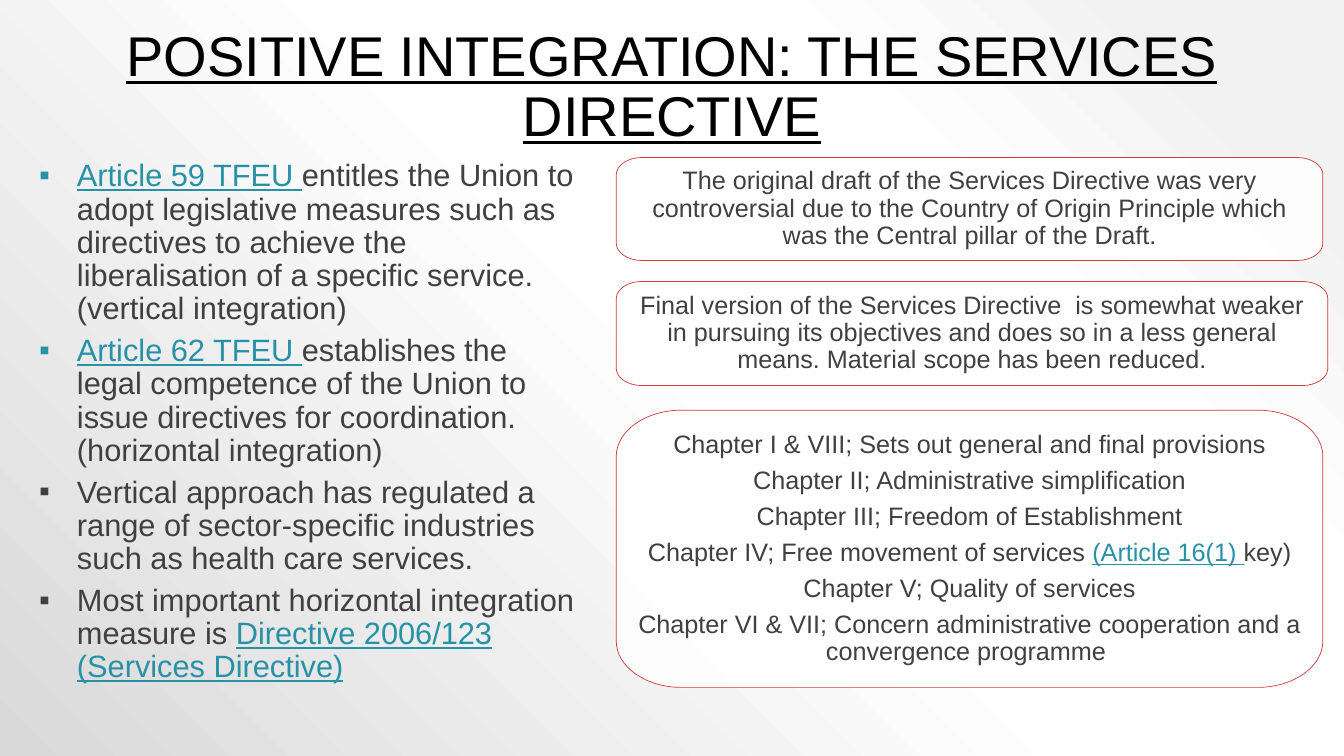
from lxml.etree import SubElement
from pptx import Presentation
from pptx.dml.color import RGBColor
from pptx.enum.text import MSO_ANCHOR, PP_ALIGN
from pptx.oxml import parse_xml
from pptx.oxml.ns import qn, nsdecls
from pptx.util import Pt

BLACK = RGBColor(0, 0, 0)
GREY = RGBColor(0x40, 0x40, 0x40)
TEAL = RGBColor(0x27, 0x91, 0xA6)
RED = RGBColor(0xD5, 0x39, 0x3D)
WHITE = RGBColor(0xFF, 0xFF, 0xFF)
FONT = "Arial"

TITLE = "POSITIVE INTEGRATION: THE SERVICES DIRECTIVE"
LINKS = {"Article 59 TFEU ", "Article 62 TFEU ", "(Article 16(1) ",
         "Directive 2006/123 (Services Directive)"}
POINTS = [
    ["Article 59 TFEU ",
     "entitles the Union to adopt legislative measures such as directives to achieve "
     "the liberalisation of a specific service.  (vertical integration)"],
    ["Article 62 TFEU ",
     "establishes the legal competence of the Union to issue directives for "
     "coordination. (horizontal integration)"],
    ["Vertical approach has regulated a range of sector-specific industries such as "
     "health care services."],
    ["Most important horizontal integration measure is ",
     "Directive 2006/123 (Services Directive)"],
]
DRAFT = [["The original draft of the Services Directive was very controversial due to the "
          "Country of Origin Principle which was the Central pillar of the Draft."]]
FINAL = [["Final version of the Services Directive  is somewhat weaker in pursuing its "
          "objectives and does so in a less general means. Material scope has been reduced."]]
CHAPTERS = [
    ["Chapter I & VIII; Sets out general and final provisions"],
    ["Chapter II; Administrative simplification"],
    ["Chapter III; Freedom of Establishment"],
    ["Chapter IV; Free movement of services ", "(Article 16(1) ", "key)"],
    ["Chapter V; Quality of services"],
    ["Chapter VI & VII; Concern administrative cooperation and a convergence programme "],
]
CARDS = [
    dict(top=112.5, wide=504.7, high=73.6, rx=18.4, ry=12.3, inset=8.6, lines=DRAFT),
    dict(top=201, wide=508.3, high=74.4, rx=18.4, ry=12.4, inset=9.4, lines=FINAL),
    dict(top=293, wide=504.7, high=198, rx=46.5, ry=33, inset=15.1, lines=CHAPTERS),
]
LEFT = 440.2
BEND = 0.55
STOPS = [(10, "F2F2F2"), (28, "FFFFFF"), (48, "FFFFFF"), (100, "D9D9D9")]


def paint(slide):
    stops = "".join(f'<a:gs pos="{pos * 1000}"><a:srgbClr val="{tone}"/></a:gs>'
                    for pos, tone in STOPS)
    slide.element.cSld.insert(0, parse_xml(
        f'<p:bg {nsdecls("p", "a")}><p:bgPr><a:gradFill rotWithShape="1">'
        f'<a:gsLst>{stops}</a:gsLst><a:path path="circle">'
        '<a:fillToRect l="100000" b="100000"/></a:path></a:gradFill>'
        '<a:effectLst/></p:bgPr></p:bg>'))


def write(frame, lines, size, color, align, after=0):
    frame.word_wrap = True
    for i, parts in enumerate(lines):
        para = frame.paragraphs[0] if i == 0 else frame.add_paragraph()
        para.alignment = align
        para.line_spacing = 0.9
        para.space_after = Pt(after)
        for part in parts:
            run = para.add_run()
            run.text = part
            font = run.font
            font.name, font.size = FONT, Pt(size)
            font.color.rgb = TEAL if part in LINKS else color
            font.underline = part in LINKS or part == TITLE


def bullet(para):
    props = para._p.get_or_add_pPr()
    props.set("marL", str(Pt(27)))
    props.set("indent", str(-Pt(27)))
    SubElement(props, qn("a:buFont"), typeface=FONT)
    SubElement(props, qn("a:buChar"), char="▪")


def curve(shape):
    steps = list(shape._element.iter(qn("a:moveTo"), qn("a:lnTo")))
    spots = [(int(step[0].get("x")), int(step[0].get("y"))) for step in steps]
    for i in range(0, 8, 2):
        (px, py), (qx, qy) = spots[i], spots[i + 1]
        cx, cy = (px, qy) if i % 4 == 0 else (qx, py)
        step = steps[i + 1]
        step.tag = qn("a:cubicBezTo")
        for n, (x, y) in enumerate([(px, py), (qx, qy)]):
            pull = SubElement(step, qn("a:pt"), x=str(round(x + BEND * (cx - x))),
                              y=str(round(y + BEND * (cy - y))))
            step.insert(n, pull)


def card(slide, top, wide, high, rx, ry, inset, lines):
    right, base = LEFT + wide, top + high
    spots = [(LEFT, top + ry), (LEFT + rx, top), (right - rx, top), (right, top + ry),
             (right, base - ry), (right - rx, base), (LEFT + rx, base), (LEFT, base - ry)]
    spots = [(Pt(x), Pt(y)) for x, y in spots]
    form = slide.shapes.build_freeform(*spots[0], scale=1.0)
    form.add_line_segments(spots[1:] + spots[:1], close=True)
    shape = form.convert_to_shape()
    curve(shape)
    shape.shadow.inherit = False
    shape.fill.solid()
    shape.fill.fore_color.rgb = WHITE
    tone = shape._element.spPr.find(qn("a:solidFill"))[0]
    SubElement(tone, qn("a:alpha"), val="90000")
    shape.line.color.rgb = RED
    shape.line.width = Pt(0.5)
    frame = shape.text_frame
    frame.vertical_anchor = MSO_ANCHOR.MIDDLE
    frame.margin_left = frame.margin_right = Pt(inset)
    frame.margin_top = frame.margin_bottom = Pt(inset)
    write(frame, lines, 18, GREY, PP_ALIGN.CENTER, 6.3)


def main():
    deck = Presentation()
    deck.slide_width, deck.slide_height = Pt(960), Pt(540)
    slide = deck.slides.add_slide(deck.slide_layouts[6])
    paint(slide)
    title = slide.shapes.add_textbox(Pt(0), Pt(16.3), Pt(960), Pt(95))
    write(title.text_frame, [[TITLE]], 40, BLACK, PP_ALIGN.CENTER)
    body = slide.shapes.add_textbox(Pt(20.9), Pt(111), Pt(396.7), Pt(386))
    write(body.text_frame, POINTS, 22, GREY, PP_ALIGN.LEFT, 6)
    for para in body.text_frame.paragraphs:
        bullet(para)
    for item in CARDS:
        card(slide, **item)
    deck.save("out.pptx")


if __name__ == "__main__":
    main()
